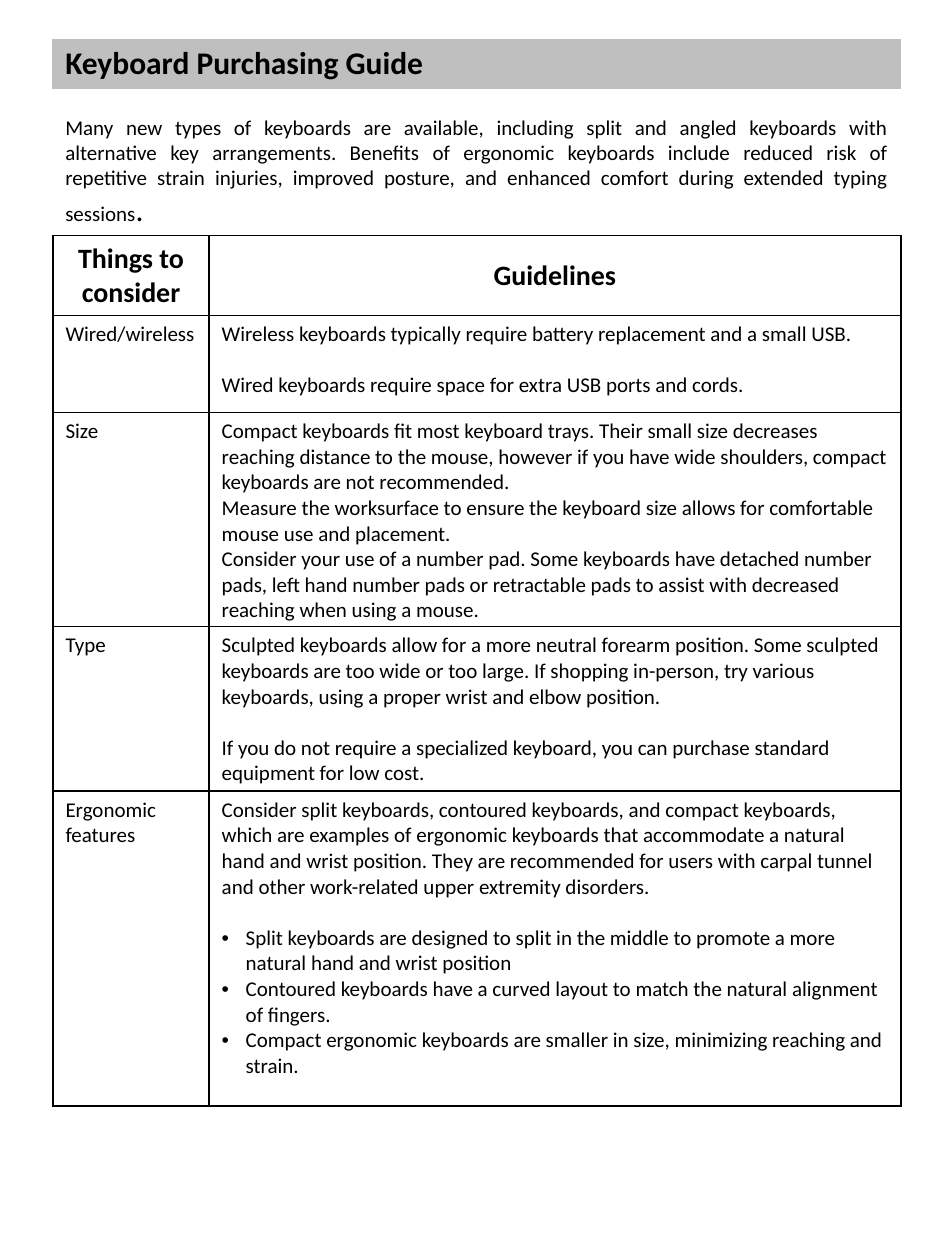
from lxml.etree import SubElement
from pptx import Presentation
from pptx.dml.color import RGBColor
from pptx.enum.shapes import MSO_SHAPE
from pptx.enum.text import MSO_ANCHOR, PP_ALIGN
from pptx.oxml.ns import qn
from pptx.util import Inches, Pt

BLACK = RGBColor(0x00, 0x00, 0x00)
GRAY = RGBColor(0xBF, 0xBF, 0xBF)
FONT = "Calibri"
LINE_GAP = Pt(14.65)
LEFT = 0.42
COLS = [1.24, 5.49]
ROWS = [0.63, 0.77, 1.7, 1.3, 2.5]
WIDTH = sum(COLS)
GAP, BULLET = "gap", "bullet"

GUIDE = [
    ("Things to consider", [("Guidelines", None)]),
    ("Wired/wireless", [
        ("Wireless keyboards typically require battery replacement and a small USB.", None),
        ("Wired keyboards require space for extra USB ports and cords.", GAP),
    ]),
    ("Size", [
        ("Compact keyboards fit most keyboard trays. Their small size decreases reaching distance "
         "to the mouse, however if you have wide shoulders, compact keyboards are not recommended.", None),
        ("Measure the worksurface to ensure the keyboard size allows for comfortable mouse use "
         "and placement.", None),
        ("Consider your use of a number pad. Some keyboards have detached number pads, left hand "
         "number pads or retractable pads to assist with decreased reaching when using a mouse.", None),
    ]),
    ("Type", [
        ("Sculpted keyboards allow for a more neutral forearm position. Some sculpted keyboards "
         "are too wide or too large. If shopping in-person, try various keyboards, using a proper "
         "wrist and elbow position.", None),
        ("If you do not require a specialized keyboard, you can purchase standard equipment for "
         "low cost.", GAP),
    ]),
    ("Ergonomic features", [
        ("Consider split keyboards, contoured keyboards, and compact keyboards, which are examples "
         "of ergonomic keyboards that accommodate a natural hand and wrist position. They are "
         "recommended for users with carpal tunnel and other work-related upper extremity "
         "disorders.", None),
        ("Split keyboards are designed to split in the middle to promote a more natural hand and "
         "wrist position", BULLET),
        ("Contoured keyboards have a curved layout to match the natural alignment of fingers.", BULLET),
        ("Compact ergonomic keyboards are smaller in size, minimizing reaching and strain.", BULLET),
    ]),
]
INTRO = ("Many new types of keyboards are available, including split and angled keyboards with "
         "alternative key arrangements. Benefits of ergonomic keyboards include reduced risk of "
         "repetitive strain injuries, improved posture, and enhanced comfort during extended "
         "typing sessions")


def add_run(p, text, size, bold=False):
    r = p.add_run()
    r.text = text
    r.font.name = FONT
    r.font.size = Pt(size)
    r.font.bold = bold
    r.font.color.rgb = BLACK


def add_border(cell):
    tcPr = cell._tc.get_or_add_tcPr()
    for side in ("a:lnL", "a:lnR", "a:lnT", "a:lnB"):
        ln = SubElement(tcPr, qn(side), w=str(Pt(1)))
        fill = SubElement(ln, qn("a:solidFill"))
        SubElement(fill, qn("a:srgbClr"), val=str(BLACK))
    cell.fill.background()


prs = Presentation()
prs.slide_width, prs.slide_height = Inches(7.5), Inches(10)
s = prs.slides.add_slide(prs.slide_layouts[6])

band = s.shapes.add_shape(MSO_SHAPE.RECTANGLE, Inches(LEFT), Inches(0.31), Inches(WIDTH), Inches(0.39))
band.shadow.inherit = False
band.fill.solid()
band.fill.fore_color.rgb = GRAY
band.line.color.rgb = GRAY
band.line.width = Pt(0.5)

title = s.shapes.add_textbox(Inches(LEFT), Inches(0.29), Inches(5.4), Inches(0.4))
title.text_frame.word_wrap = True
add_run(title.text_frame.paragraphs[0], "Keyboard Purchasing Guide", 18, True)

table = s.shapes.add_table(len(ROWS), len(COLS), Inches(LEFT), Inches(1.87),
                           Inches(WIDTH), Inches(sum(ROWS))).table
table.first_row = table.horz_banding = False
for column, width in zip(table.columns, COLS):
    column.width = Inches(width)
for row, height in zip(table.rows, ROWS):
    row.height = Inches(height)

for i, (topic, advice) in enumerate(GUIDE):
    header = i == 0
    for j, lines in enumerate([[(topic, None)], advice]):
        cell = table.cell(i, j)
        add_border(cell)
        tf = cell.text_frame
        previous = None
        for k, (text, style) in enumerate(lines):
            p = tf.add_paragraph() if k else tf.paragraphs[0]
            if header:
                p.alignment = PP_ALIGN.CENTER
            if style and style != previous:
                p.space_before = LINE_GAP
            if style == BULLET:
                pPr = p._p.get_or_add_pPr()
                pPr.set("marL", str(Inches(0.19)))
                pPr.set("indent", str(-Inches(0.19)))
                SubElement(pPr, qn("a:buFont"), typeface="Arial")
                SubElement(pPr, qn("a:buChar"), char="•")
            add_run(p, text, 16 if header else 12, header)
            previous = style
table.cell(0, 1).vertical_anchor = MSO_ANCHOR.MIDDLE

intro = s.shapes.add_textbox(Inches(LEFT), Inches(0.86), Inches(WIDTH), Inches(1.01))
intro.text_frame.word_wrap = True
p = intro.text_frame.paragraphs[0]
p.alignment = PP_ALIGN.JUSTIFY
add_run(p, INTRO, 12)
add_run(p, ".", 18)

prs.save("out.pptx")
